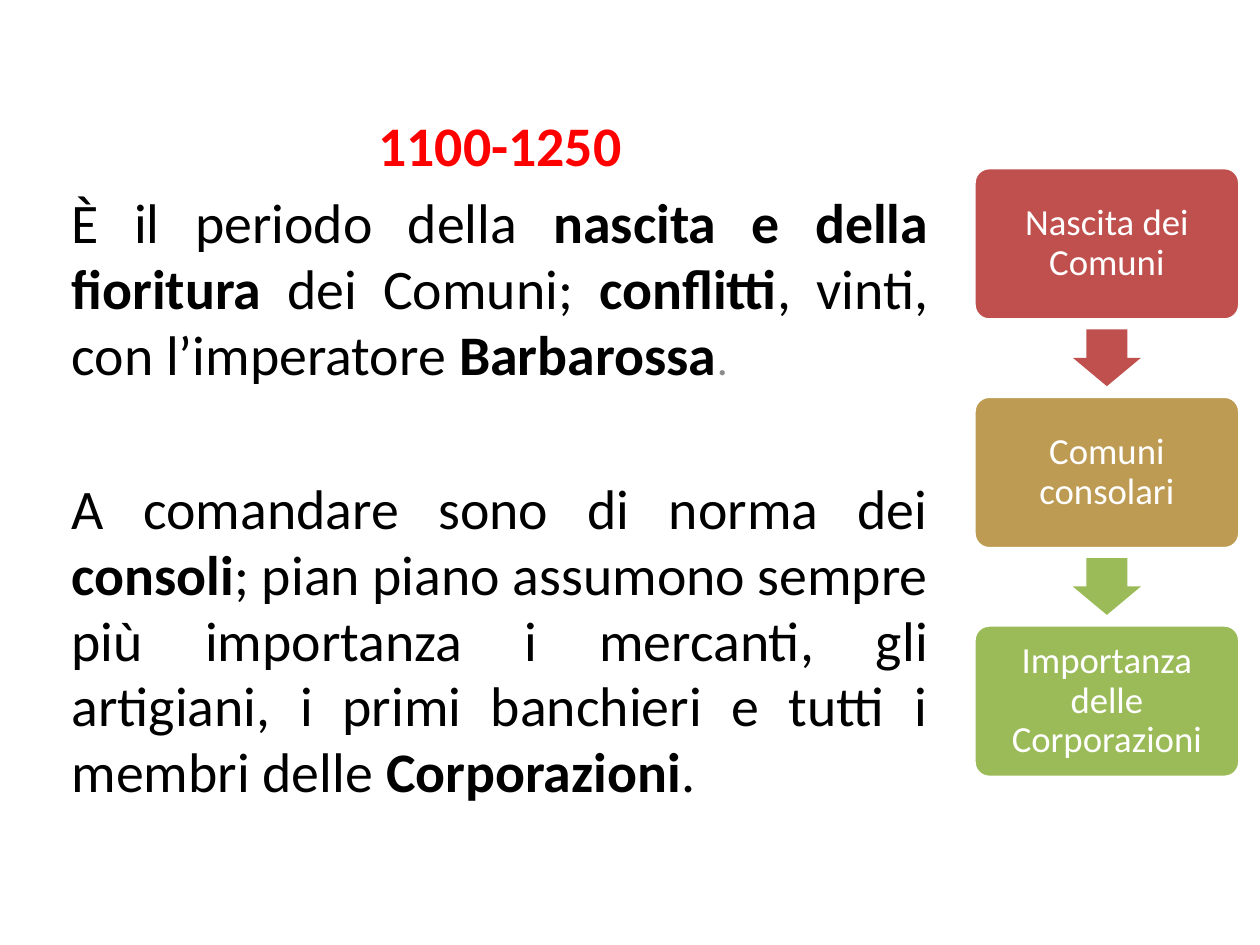
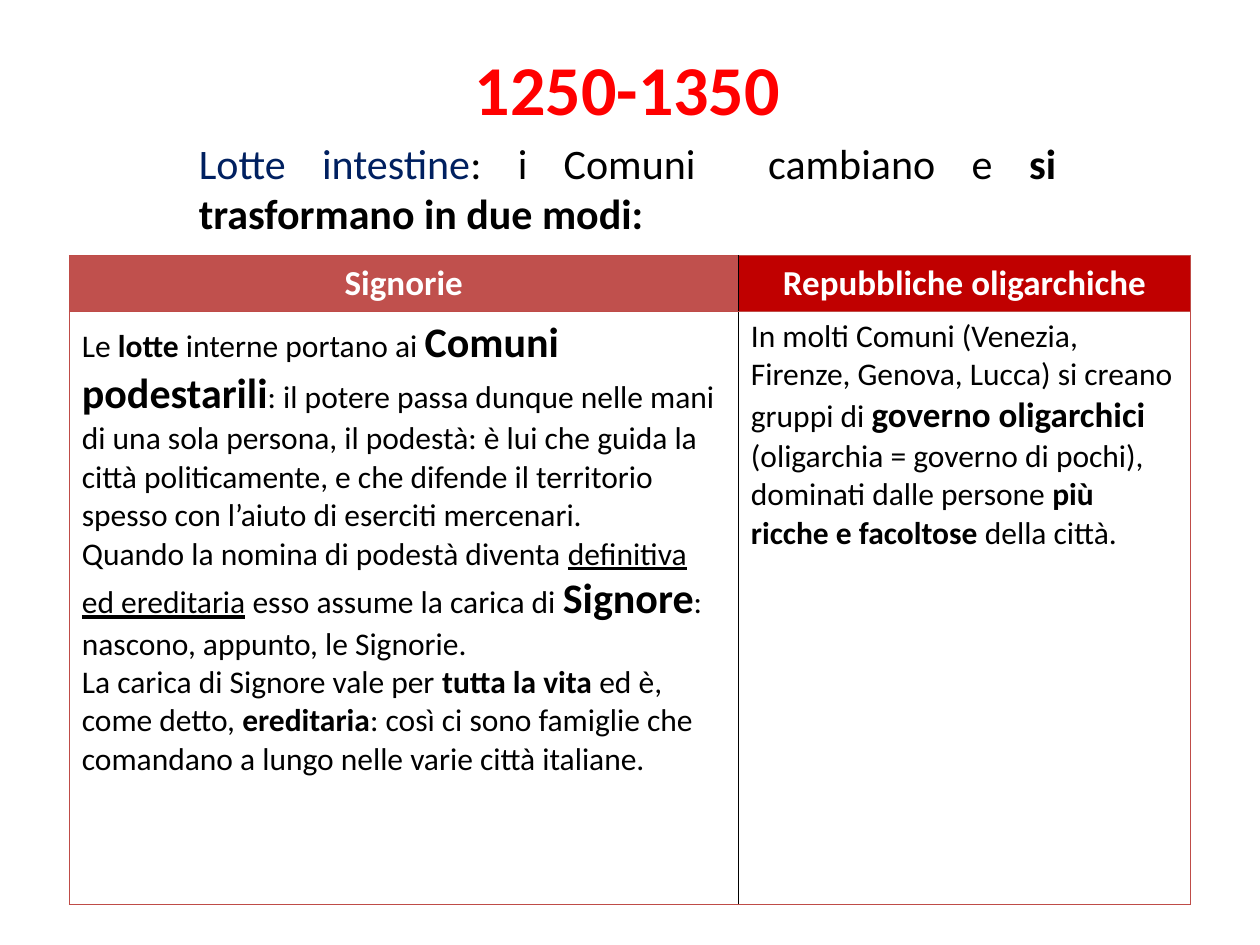
from lxml import etree
from pptx import Presentation
from pptx import util as u
from pptx.dml.color import RGBColor
from pptx.enum import shapes, text
from pptx.oxml.ns import qn

COLORS = {
    "title": "FF0000", "body": "000000", "muted": "8C8C8C", "navy": "002060",
    "white": "FFFFFF", "red": "C0504D", "gold": "BD9B53", "green": "9BBB59",
    "crimson": "C00000", "frame": "BF4C48",
}
BOLD = {"bold": True}
CENTER, JUSTIFY, LEFT = text.PP_ALIGN.CENTER, text.PP_ALIGN.JUSTIFY, text.PP_ALIGN.LEFT


class Deck:
    font = "Calibri"

    def __init__(self):
        self.prs = Presentation()
        self.prs.slide_width, self.prs.slide_height = u.Inches(10), u.Inches(7.5)
        self.slide = None

    def new_slide(self):
        self.slide = self.prs.slides.add_slide(self.prs.slide_layouts[6])

    def rgb(self, color):
        return RGBColor.from_string(COLORS[color])

    def paint(self, target, color):
        target.fill.solid()
        target.fill.fore_color.rgb = self.rgb(color)

    def paragraph(self, frame, runs, size, color="body", align=LEFT, before=0, spacing=None):
        first = not frame.paragraphs[0].runs
        paragraph = frame.paragraphs[0] if first else frame.add_paragraph()
        paragraph.alignment = align
        paragraph.space_before = u.Pt(before)
        paragraph.font.name = self.font
        if spacing:
            paragraph.line_spacing = spacing
        for words, changes in runs:
            look = {"size": size, "color": color, "bold": False, "underline": False, **changes}
            run = paragraph.add_run()
            run.text = words
            run.font.size = u.Pt(look["size"])
            run.font.bold = look["bold"]
            run.font.underline = look["underline"]
            run.font.color.rgb = self.rgb(look["color"])

    def text_box(self, left, top, width, height):
        box = self.slide.shapes.add_textbox(*map(u.Inches, (left, top, width, height)))
        box.text_frame.word_wrap = True
        return box.text_frame

    def shape(self, kind, left, top, width, height, color, adjustments):
        shape = self.slide.shapes.add_shape(kind, *map(u.Inches, (left, top, width, height)))
        shape.shadow.inherit = False
        self.paint(shape, color)
        shape.line.fill.background()
        for index, value in enumerate(adjustments):
            shape.adjustments[index] = value
        return shape

    def step(self, left, top, width, height, color, label):
        box = self.shape(shapes.MSO_SHAPE.ROUNDED_RECTANGLE, left, top, width, height, color, [0.1])
        box.line.color.rgb = self.rgb("white")
        box.line.width = u.Pt(2)
        frame = box.text_frame
        frame.word_wrap = True
        frame.vertical_anchor = text.MSO_ANCHOR.MIDDLE
        frame.margin_left = frame.margin_right = u.Inches(0.09)
        frame.margin_top = frame.margin_bottom = u.Inches(0.09)
        self.paragraph(frame, [(label, {})], 21, "white", CENTER, spacing=0.9)

    def arrow(self, center, top, color):
        width, height = 0.54, 0.45
        self.shape(shapes.MSO_SHAPE.DOWN_ARROW, center - width / 2, top, width, height,
                   color, [0.6, 0.5])

    def table(self, left, top, widths, heights):
        frame = self.slide.shapes.add_table(
            len(heights), len(widths),
            *map(u.Inches, (left, top, sum(widths), sum(heights))))
        table = frame.table
        table.first_row = table.horz_banding = False
        for column, width in zip(table.columns, widths):
            column.width = u.Inches(width)
        for row, height in zip(table.rows, heights):
            row.height = u.Inches(height)
        return table

    def borders(self, cell, sides):
        properties = cell._tc.get_or_add_tcPr()
        for index, (side, (color, width)) in enumerate(sides.items()):
            line = etree.Element(qn(f"a:ln{side}"), w=str(u.Pt(width)))
            fill = etree.SubElement(line, qn("a:solidFill"))
            etree.SubElement(fill, qn("a:srgbClr"), val=COLORS[color])
            properties.insert(index, line)


def add_birth_of_communes(deck):
    deck.new_slide()
    story = deck.text_box(0.47, 0.86, 7, 5.94)
    size, spacing = 31.9, 0.98
    deck.paragraph(story, [("1100-1250", BOLD)], size, "title", CENTER, spacing=spacing)
    deck.paragraph(story, [
        ("È il periodo della ", {}), ("nascita e della fioritura", BOLD),
        (" dei Comuni; ", {}), ("conflitti", BOLD),
        (", vinti, con l’imperatore ", {}), ("Barbarossa", BOLD),
        (".", {"size": 25, "color": "muted"}),
    ], size, align=JUSTIFY, before=6.4, spacing=spacing)
    deck.paragraph(story, [
        ("A comandare sono di norma dei ", {}), ("consoli", BOLD),
        ("; pian piano assumono sempre più importanza i mercanti, gli artigiani, "
         "i primi banchieri e tutti i membri delle ", {}),
        ("Corporazioni", BOLD), (".", {}),
    ], size, align=JUSTIFY, before=51, spacing=spacing)

    left, top, width, height, pitch = 7.73, 1.33, 2.11, 1.21, 1.815
    steps = [("Nascita dei Comuni", "red", "red"),
             ("Comuni consolari", "gold", "green"),
             ("Importanza delle Corporazioni", "green", None)]
    for index, (label, color, arrow_color) in enumerate(steps):
        step_top = top + index * pitch
        deck.step(left, step_top, width, height, color, label)
        if arrow_color:
            deck.arrow(left + width / 2, step_top + 1.285, arrow_color)


def add_two_outcomes(deck):
    deck.new_slide()
    heading = deck.text_box(1.48, 0.31, 7, 1.8)
    deck.paragraph(heading, [("1250-1350", BOLD)], 40, "title", CENTER)
    deck.paragraph(heading, [
        ("Lotte intestine", {"color": "navy"}), (": i Comuni  cambiano e ", {}),
        ("si trasformano in due modi:", BOLD),
    ], 24, align=JUSTIFY, before=4.8)

    large = {"size": 24, "bold": True}
    signorie = [
        [("Le ", {}), ("lotte", BOLD), (" interne portano ai ", {}),
         ("Comuni podestarili", large),
         (": il potere passa dunque nelle mani di una sola persona, il podestà: è lui che "
          "guida la città politicamente, e che difende il territorio spesso con l’aiuto di "
          "eserciti mercenari.", {})],
        [("Quando la nomina di podestà diventa ", {}),
         ("definitiva ed ereditaria", {"underline": True}),
         (" esso assume la carica di ", {}), ("Signore", large),
         (": nascono, appunto, le Signorie.", {})],
        [("La carica di Signore vale per ", {}), ("tutta la vita ", BOLD),
         ("ed è, come detto, ", {}), ("ereditaria", BOLD),
         (": così ci sono famiglie che comandano a lungo nelle varie città italiane.", {})],
    ]
    republics = [
        [("In molti Comuni (Venezia, Firenze, Genova, Lucca) si creano gruppi di ", {}),
         ("governo oligarchici ", {"size": 20, "bold": True}),
         ("(oligarchia = governo di pochi), dominati dalle persone ", {}),
         ("più ricche e facoltose ", BOLD), ("della città.", {})],
    ]
    outcomes = [("Signorie", "red", signorie),
                ("Repubbliche oligarchiche", "crimson", republics)]
    table = deck.table(0.55, 2.03, [5.31, 3.59], [0.44, 4.71])
    frame, divider = ("frame", 0.75), ("body", 1)
    for column, (title, color, paragraphs) in enumerate(outcomes):
        header, body = table.cell(0, column), table.cell(1, column)
        deck.paragraph(header.text_frame, [(title, BOLD)], 20, "white", CENTER)
        for runs in paragraphs:
            deck.paragraph(body.text_frame, runs, 18)
        for cell, fill in ((header, color), (body, "white")):
            deck.paint(cell, fill)
            deck.borders(cell, {"L": divider if column else frame,
                                "R": frame if column else divider,
                                "T": frame, "B": frame})


def main():
    deck = Deck()
    add_birth_of_communes(deck)
    add_two_outcomes(deck)
    deck.prs.save("out.pptx")


if __name__ == "__main__":
    main()
